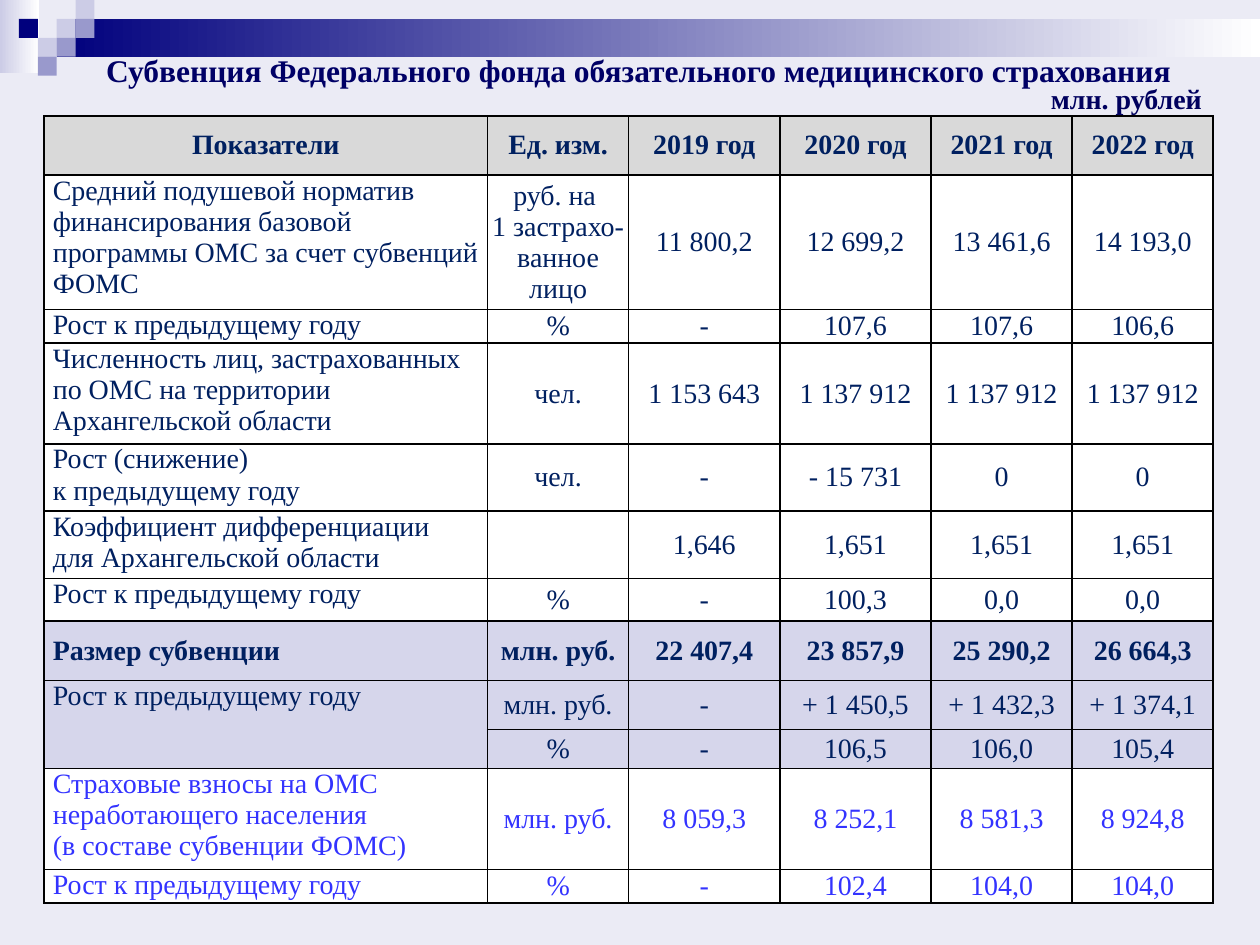
import copy

import pptx
import pptx.dml.color
import pptx.enum.shapes
import pptx.enum.text
import pptx.oxml
import pptx.oxml.ns
import pptx.util

UNIT = 0.15  # side of one square of the corner pattern, inches
FONT = "Times New Roman"
NAVY, BLUE = "002060", "3333FF"
WHITE, GREY, LILAC = "FFFFFF", "D9D9D9", "D6D6EB"
ALIGN = pptx.enum.text.PP_ALIGN
ANCHOR = pptx.enum.text.MSO_ANCHOR

COLS = [3.52, 1.12, 1.2, 1.2, 1.12, 1.12]
# height, fill, text colour, bold, cell texts
ROWS = [
    (0.47, GREY, NAVY, True,
     ["Показатели", "Ед. изм.", "2019 год", "2020 год", "2021 год", "2022 год"]),
    (0.98, WHITE, NAVY, False,
     ["Средний подушевой норматив финансирования базовой программы ОМС за счет субвенций ФОМС",
      "руб. на \n1 застрахо-ванное лицо", "11 800,2", "12 699,2", "13 461,6", "14 193,0"]),
    (0.25, WHITE, NAVY, False,
     ["Рост к предыдущему году", "%", "-", "107,6", "107,6", "106,6"]),
    (0.74, WHITE, NAVY, False,
     ["Численность лиц, застрахованных по ОМС на территории Архангельской области",
      "чел.", "1 153 643", "1 137 912", "1 137 912", "1 137 912"]),
    (0.49, WHITE, NAVY, False,
     ["Рост (снижение) \nк предыдущему году", "чел.", "-", "- 15 731", "0", "0"]),
    (0.49, WHITE, NAVY, False,
     ["Коэффициент дифференциации \nдля Архангельской области",
      "", "1,646", "1,651", "1,651", "1,651"]),
    (0.34, WHITE, NAVY, False,
     ["Рост к предыдущему году", "%", "-", "100,3", "0,0", "0,0"]),
    (0.47, LILAC, NAVY, True,
     ["Размер субвенции", "млн. руб.", "22 407,4", "23 857,9", "25 290,2", "26 664,3"]),
    (0.39, LILAC, NAVY, False,
     ["Рост к предыдущему году", "млн. руб.", "-", "+ 1 450,5", "+ 1 432,3", "+ 1 374,1"]),
    (0.31, LILAC, NAVY, False, ["", "%", "-", "106,5", "106,0", "105,4"]),
    (0.74, WHITE, BLUE, False,
     ["Страховые взносы на ОМС неработающего населения \n(в составе субвенции ФОМС)",
      "млн. руб.", "8 059,3", "8 252,1", "8 581,3", "8 924,8"]),
    (0.25, WHITE, BLUE, False,
     ["Рост к предыдущему году", "%", "-", "102,4", "104,0", "104,0"]),
]
HEADER_ROW, NORM_ROW, TOTAL_ROW, GROWTH_ROW = 0, 1, 7, 8


def rgb(value):
    return pptx.dml.color.RGBColor.from_string(value)


def inches(*values):
    return [pptx.util.Inches(v) for v in values]


def write(tf, text, size=16, color=NAVY, bold=False, align=ALIGN.CENTER):
    p = tf.paragraphs[0]
    p.text = text
    p.alignment = align
    for r in p.runs:
        r.font.name = FONT
        r.font.size = pptx.util.Pt(size)
        r.font.bold = bold
        r.font.color.rgb = rgb(color)
    # Line breaks take the format of the text around them
    for br in p._p.findall(pptx.oxml.ns.qn("a:br")):
        br.append(copy.deepcopy(p.runs[0].font._element))


def add_box(s, left, top, width, height, *colors):
    """Rectangle with a solid fill, or a gradient when two colours are given."""
    sp = s.shapes.add_shape(pptx.enum.shapes.MSO_SHAPE.RECTANGLE,
                            *inches(left, top, width, height))
    sp.shadow.inherit = False
    sp.line.fill.background()
    if len(colors) == 1:
        sp.fill.solid()
        sp.fill.fore_color.rgb = rgb(colors[0])
        return
    sp.fill.gradient()
    sp.fill.gradient_angle = 0
    for stop, color, position in zip(sp.fill.gradient_stops, colors, (0, 1)):
        stop.color.rgb = rgb(color)
        stop.position = position


def add_label(s, left, top, width, height, text, **style):
    tf = s.shapes.add_textbox(*inches(left, top, width, height)).text_frame
    tf.word_wrap = False
    write(tf, text, bold=True, **style)


def set_borders(cell):
    pr = cell._tc.get_or_add_tcPr()
    for i, side in enumerate(("lnL", "lnR", "lnT", "lnB")):
        pr.insert(i, pptx.oxml.parse_xml(
            f'<a:{side} {pptx.oxml.ns.nsdecls("a")} w="12700"><a:solidFill>'
            f'<a:srgbClr val="000000"/></a:solidFill></a:{side}>'))


def side_margin(row, col):
    if (row, col) == (NORM_ROW, 1):
        return 0.02
    return 0.07 if col < 2 or row <= NORM_ROW else 0


def add_corner(s):
    add_box(s, 0, 0, 0.31, 0.58, "CCCCE6", WHITE)
    add_box(s, 3 * UNIT, UNIT, 10 - 3 * UNIT, 2 * UNIT, "00007D", WHITE)
    squares = {"CCCCE6": [(3, 1), (4, 0), (2, 2)],
               "9999CC": [(4, 1), (3, 2), (2, 3)],
               "00007D": [(1, 1)]}
    for color, places in squares.items():
        for col, row in places:
            add_box(s, col * UNIT, row * UNIT, UNIT, UNIT, color)


def add_subsidy_table(s):
    heights = [row[0] for row in ROWS]
    frame = s.shapes.add_table(len(ROWS), len(COLS),
                               *inches(0.35, 0.92, sum(COLS), sum(heights)))
    table = frame.table
    for column, width in zip(table.columns, COLS):
        column.width = pptx.util.Inches(width)
    for i, (height, fill, color, bold, texts) in enumerate(ROWS):
        table.rows[i].height = pptx.util.Inches(height)
        for j, text in enumerate(texts):
            cell = table.cell(i, j)
            cell.fill.solid()
            cell.fill.fore_color.rgb = rgb(fill)
            set_borders(cell)
            cell.margin_left = cell.margin_right = pptx.util.Inches(side_margin(i, j))
            cell.margin_top = cell.margin_bottom = 0
            indicator = j == 0 and i != HEADER_ROW
            top = indicator and i != TOTAL_ROW
            cell.vertical_anchor = ANCHOR.TOP if top else ANCHOR.MIDDLE
            write(cell.text_frame, text, color=color, bold=bold,
                  align=ALIGN.LEFT if indicator else ALIGN.CENTER)
    table.cell(GROWTH_ROW, 0).merge(table.cell(GROWTH_ROW + 1, 0))


def main():
    prs = pptx.Presentation()
    prs.slide_width, prs.slide_height = inches(10, 7.5)
    s = prs.slides.add_slide(prs.slide_layouts[6])
    s.background.fill.solid()
    s.background.fill.fore_color.rgb = rgb("EBEBF5")

    # Corner pattern and band
    add_corner(s)

    # Title and unit
    add_label(s, 0.7, 0.36, 8.74, 0.4,
              "Субвенция Федерального фонда обязательного медицинского страхования",
              size=18, color="000066")
    add_label(s, 8.23, 0.6, 1.42, 0.37, "млн. рублей", color="00005E")

    # Indicators by year
    add_subsidy_table(s)

    prs.save("out.pptx")


if __name__ == "__main__":
    main()
